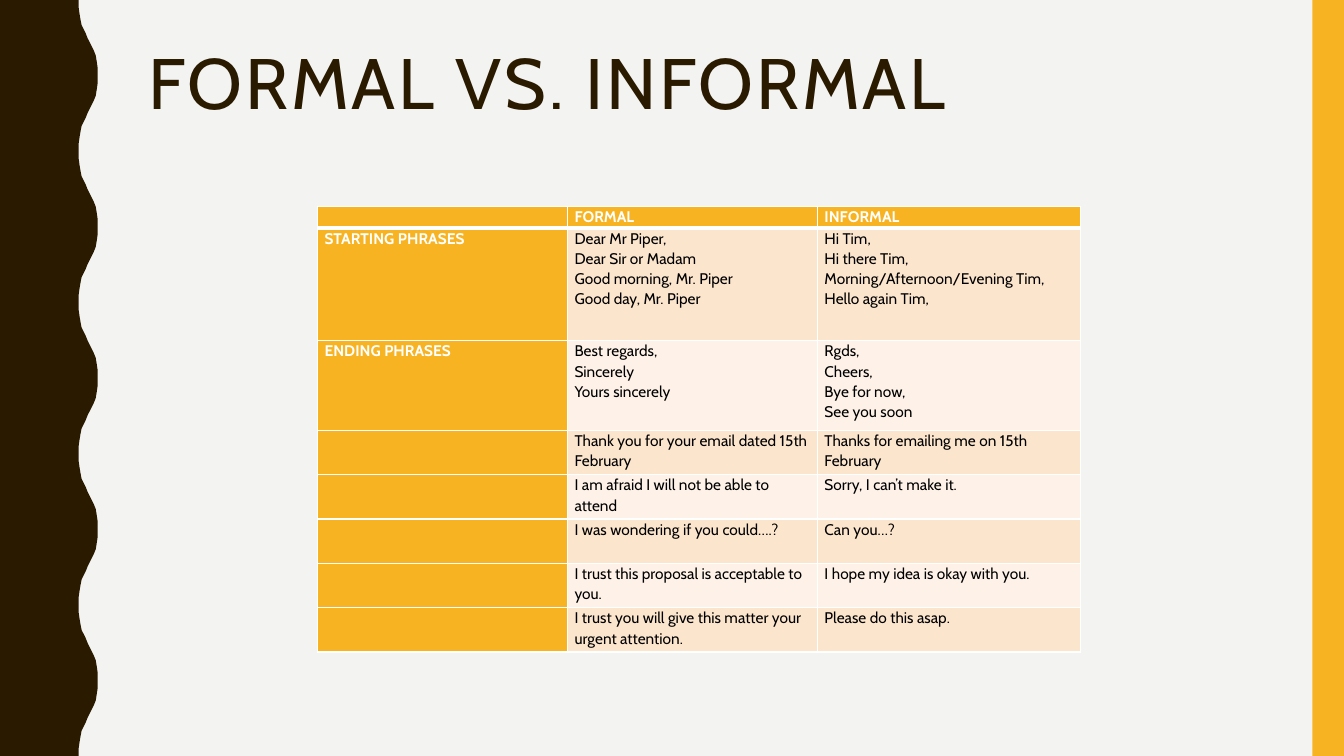
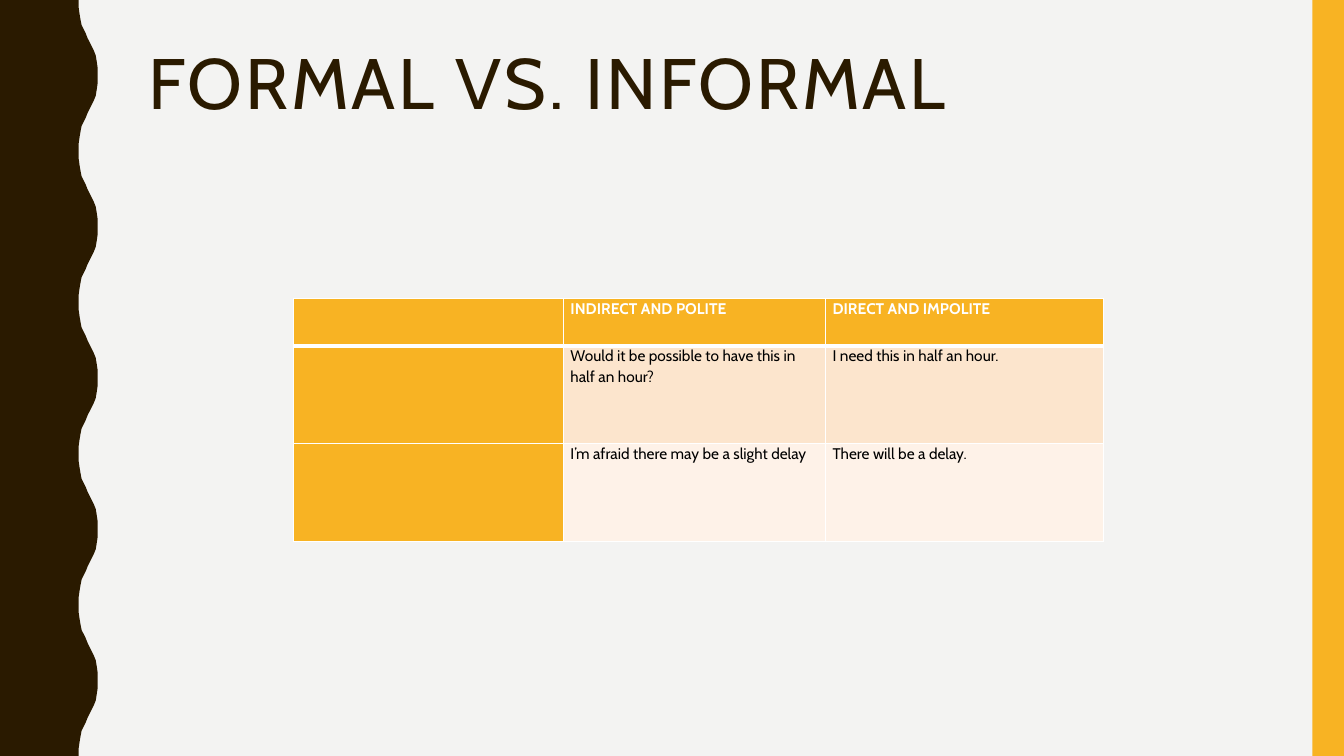
import pptx
import pptx.dml.color
import pptx.enum.shapes
import pptx.enum.text
import pptx.oxml
import pptx.oxml.ns
import pptx.util
from lxml import etree

RGB = pptx.dml.color.RGBColor
Pt = pptx.util.Pt
qn = pptx.oxml.ns.qn

# Shared look
PX = 9144  # EMU per px, 100 px to the inch
FONT = "Cabin"
PAPER = RGB(0xF3, 0xF3, 0xF2)
BROWN = RGB(0x2A, 0x1A, 0x00)
AMBER = RGB(0xF8, 0xB3, 0x23)
PEACH = RGB(0xFC, 0xE5, 0xCD)
CREAM = RGB(0xFE, 0xF2, 0xE8)
WHITE = RGB(0xFF, 0xFF, 0xFF)
BLACK = RGB(0x00, 0x00, 0x00)
TITLE_BOX = (137, 42, 1113, 163)
BAR_LEFT = 1302
# Wavy edge: one half wave as (x, y), then mirrored and repeated
WAVE_COUNT, WAVE_HEIGHT = 5, 150
HALF_WAVE = [(78, 0), (78, 7), (79, 14), (80, 20), (81, 25), (83, 29), (85, 33),
             (87, 38), (89, 42), (91, 46), (93, 50), (95, 55), (96, 61), (97, 68),
             (97, 75)]

# Content: each cell is a list of lines
SLIDES = [
    {
        "title": "FORMAL VS. INFORMAL",
        "at": (315, 205),
        "cols": [248, 248, 261],
        "heights": [21, 112, 89, 44, 44, 44, 44, 44],
        "rows": [
            ([], ["FORMAL"], ["INFORMAL"]),
            (["STARTING PHRASES"],
             ["Dear Mr Piper,", "Dear Sir or Madam", "Good morning, Mr. Piper",
              "Good day, Mr. Piper"],
             ["Hi Tim,", "Hi there Tim,", "Morning/Afternoon/Evening Tim,",
              "Hello again Tim,"]),
            (["ENDING PHRASES"],
             ["Best regards,", "Sincerely", "Yours sincerely"],
             ["Rgds,", "Cheers,", "Bye for now,", "See you soon"]),
            ([], ["Thank you for your email dated 15th February"],
             ["Thanks for emailing me on 15th February"]),
            ([], ["I am afraid I will not be able to attend"],
             ["Sorry, I can’t make it."]),
            ([], ["I was wondering if you could….?"], ["Can you…?"]),
            ([], ["I trust this proposal is acceptable to you."],
             ["I hope my idea is okay with you."]),
            ([], ["I trust you will give this matter your urgent attention."],
             ["Please do this asap."]),
        ],
    },
    {
        "title": "FORMAL VS. INFORMAL",
        "at": (291, 296),
        "cols": [268, 260, 276],
        "heights": [47, 97, 97],
        "rows": [
            ([], ["INDIRECT AND POLITE"], ["DIRECT AND IMPOLITE"]),
            ([], ["Would it be possible to have this in half an hour?"],
             ["I need this in half an hour."]),
            ([], ["I’m afraid there may be a slight delay"],
             ["There will be a delay."]),
        ],
    },
]


def px(*values):
    return [v * PX for v in values]


def paint(sp, color):
    sp.shadow.inherit = False
    sp.fill.solid()
    sp.fill.fore_color.rgb = color
    sp.line.fill.background()


def prepare_layout(layout):
    """Background and title position that every slide inherits."""
    layout.background.fill.solid()
    layout.background.fill.fore_color.rgb = PAPER
    for ph in list(layout.placeholders):
        if ph.placeholder_format.idx:
            ph.element.getparent().remove(ph.element)
        else:
            ph.left, ph.top, ph.width, ph.height = px(*TITLE_BOX)


def move_bands_to_layout(s, layout, width, height):
    """Draw the wavy band and the right bar, then hand them to the layout."""
    wave = HALF_WAVE + [(x, WAVE_HEIGHT - y) for x, y in HALF_WAVE[-2::-1]]
    edge = [(x, y + i * WAVE_HEIGHT) for i in range(WAVE_COUNT) for x, y in wave]
    builder = s.shapes.build_freeform(0, 0, scale=PX)
    builder.add_line_segments(edge + [(0, WAVE_COUNT * WAVE_HEIGHT)], close=True)
    band = builder.convert_to_shape()
    left = BAR_LEFT * PX
    bar = s.shapes.add_shape(pptx.enum.shapes.MSO_SHAPE.RECTANGLE,
                             left, 0, width - left, height)
    for sp, color in ((band, BROWN), (bar, AMBER)):
        paint(sp, color)
        layout.shapes.element.append(sp.element)


def add_title(s, text):
    tf = s.shapes.title.text_frame
    tf.vertical_anchor = pptx.enum.text.MSO_ANCHOR.TOP
    tf.auto_size = pptx.enum.text.MSO_AUTO_SIZE.NONE
    p = tf.paragraphs[0]
    p.alignment = pptx.enum.text.PP_ALIGN.LEFT
    p.line_spacing = 0.9
    r = p.add_run()
    r.text = text
    r.font.name, r.font.size = FONT, Pt(51)
    r.font.color.rgb = BROWN
    r.font._element.set("spc", "200")


def set_borders(cell, top, bottom):
    tc_pr = cell._tc.get_or_add_tcPr()
    for side, width in (("L", 1), ("R", 1), ("T", top), ("B", bottom)):
        ln = etree.SubElement(tc_pr, qn("a:ln" + side), w=str(Pt(width)))
        fill = etree.SubElement(ln, qn("a:solidFill"))
        etree.SubElement(fill, qn("a:srgbClr"), val=str(WHITE))


def fill_cell(cell, lines, color, strong):
    cell.fill.solid()
    cell.fill.fore_color.rgb = color
    cell.margin_left = cell.margin_right = 7 * PX
    cell.margin_top = cell.margin_bottom = 0
    tf = cell.text_frame
    for i, line in enumerate(lines):
        p = tf.paragraphs[0] if i == 0 else tf.add_paragraph()
        p.line_spacing = 1.07
        r = p.add_run()
        r.text = line
        r.font.name, r.font.size, r.font.bold = FONT, Pt(11), strong
        r.font.color.rgb = WHITE if strong else BLACK
    if not lines:  # small end mark keeps an empty row low
        etree.SubElement(tf.paragraphs[0]._p, qn("a:endParaRPr"), sz="1100")


def add_phrase_table(s, data):
    rows, cols, heights = data["rows"], data["cols"], data["heights"]
    frame = s.shapes.add_table(len(rows), len(cols),
                               *px(*data["at"], sum(cols), sum(heights)))
    table = frame.table
    table.first_row = table.horz_banding = False
    for col, width in zip(table.columns, cols):
        col.width = width * PX
    for y, (row, height) in enumerate(zip(rows, heights)):
        table.rows[y].height = height * PX
        for x, lines in enumerate(row):
            cell = table.cell(y, x)
            heading = y == 0 or x == 0
            color = AMBER if heading else PEACH if y % 2 else CREAM
            set_borders(cell, 3 if y == 1 else 1, 3 if y == 0 else 1)
            fill_cell(cell, lines, color, heading)


def main():
    prs = pptx.Presentation()
    prs.slide_width, prs.slide_height = Pt(960), Pt(540)
    layout = prs.slide_layouts[5]
    prepare_layout(layout)
    for i, data in enumerate(SLIDES):
        s = prs.slides.add_slide(layout)
        if i == 0:
            move_bands_to_layout(s, layout, prs.slide_width, prs.slide_height)
        add_title(s, data["title"])
        add_phrase_table(s, data)
    prs.save("out.pptx")


if __name__ == "__main__":
    main()
